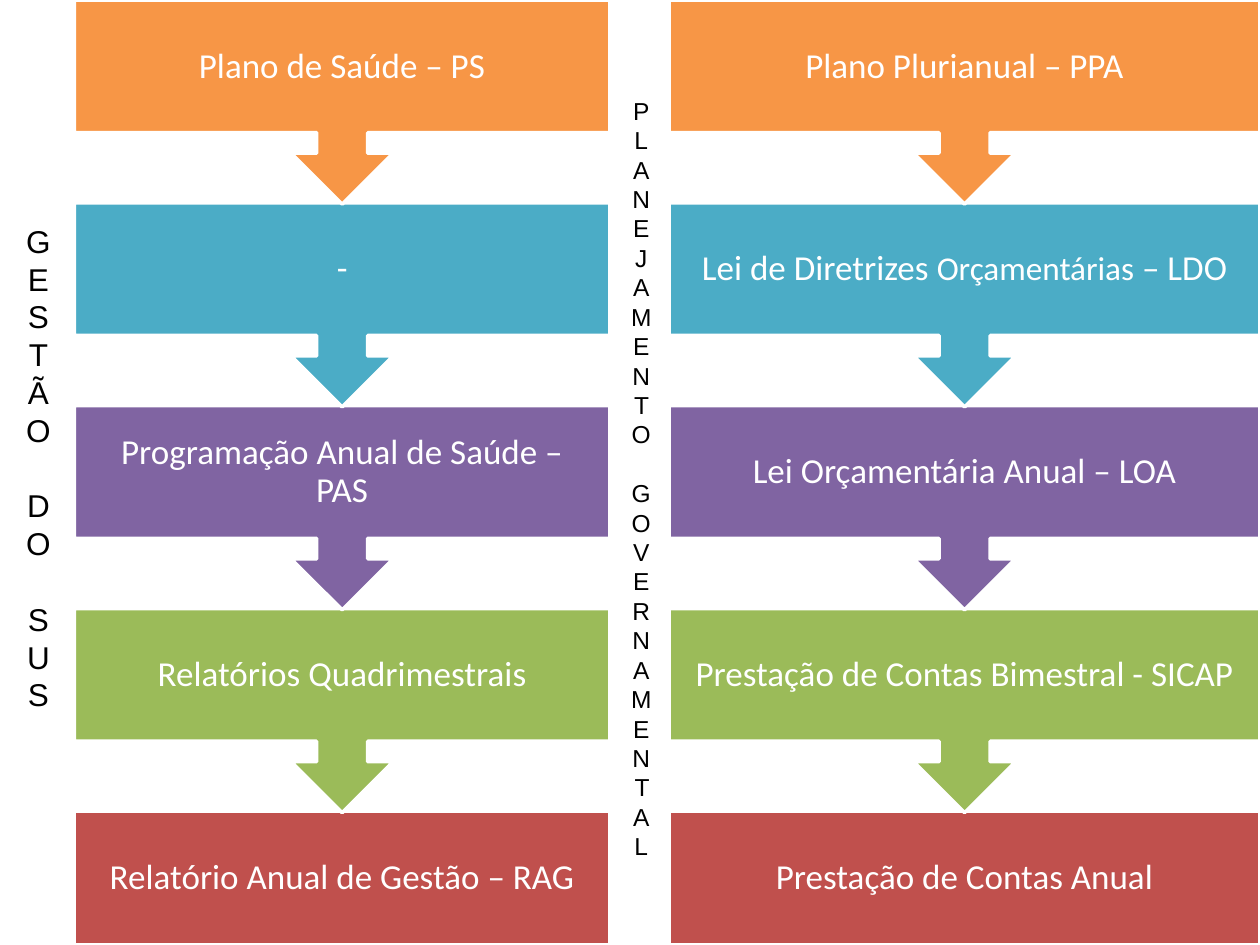
from typing import NamedTuple

from pptx import Presentation
from pptx.dml.color import RGBColor
from pptx.enum.shapes import MSO_SHAPE
from pptx.enum.text import MSO_ANCHOR, PP_ALIGN
from pptx.util import Inches, Pt

COLORS = ["F79646", "4BACC6", "8064A2", "9BBB59", "C0504D"]
STEP = 1.61
CALLOUT_HEIGHT = 1.62
BOX_HEIGHT = 1.06


class Run(NamedTuple):
    text: str
    size: int = 20


class Flow(NamedTuple):
    left: float
    width: float
    steps: list[list[Run]]


class Label(NamedTuple):
    left: float
    width: float
    height: float
    text: str
    size: int


FLOWS = [
    Flow(0.59, 4.25, [
        [Run("Plano de Saúde – PS")],
        [Run("-")],
        [Run("Programação Anual de Saúde – PAS")],
        [Run("Relatórios Quadrimestrais")],
        [Run("Relatório Anual de Gestão – RAG")],
    ]),
    Flow(5.31, 4.69, [
        [Run("Plano Plurianual – PPA")],
        [Run("Lei de Diretrizes "), Run("Orçamentárias", 19), Run(" – LDO")],
        [Run("Lei Orçamentária Anual – LOA")],
        [Run("Prestação de Contas Bimestral - SICAP")],
        [Run("Prestação de Contas Anual")],
    ]),
]
LABELS = [
    Label(0.04, 0.53, 7.32, "GESTÃO DO SUS", 18),
    Label(4.86, 0.46, 7.49, "PLANEJAMENTO GOVERNAMENTAL", 14),
]


def rgb(color: str) -> RGBColor:
    return RGBColor.from_string(color)


def add_runs(p, runs: list[Run], font: str, color: str) -> None:
    p.alignment = PP_ALIGN.CENTER
    for run in runs:
        r = p.add_run()
        r.text = run.text
        r.font.name = font
        r.font.size = Pt(run.size)
        r.font.color.rgb = rgb(color)


def add_step(s, flow: Flow, index: int) -> None:
    """Draw one step; every step but the last points down to the next."""
    is_last = index == len(flow.steps) - 1
    kind = MSO_SHAPE.RECTANGLE if is_last else MSO_SHAPE.UP_ARROW_CALLOUT
    height = BOX_HEIGHT if is_last else CALLOUT_HEIGHT
    left, top, width = Inches(flow.left), Inches(index * STEP), Inches(flow.width)

    sp = s.shapes.add_shape(kind, left, top, width, Inches(height))
    sp.rotation = 0 if is_last else 180
    sp.shadow.inherit = False
    sp.fill.solid()
    sp.fill.fore_color.rgb = rgb(COLORS[index])
    sp.line.color.rgb = rgb("FFFFFF")
    sp.line.width = Pt(2)

    tf = s.shapes.add_textbox(left, top, width, Inches(BOX_HEIGHT)).text_frame
    tf.word_wrap = True
    tf.vertical_anchor = MSO_ANCHOR.MIDDLE
    tf.margin_left = tf.margin_right = Inches(0.16)
    tf.margin_top = tf.margin_bottom = Inches(0.16)
    p = tf.paragraphs[0]
    p.line_spacing = 0.9
    add_runs(p, flow.steps[index], "Calibri", "FFFFFF")


def add_label(s, label: Label) -> None:
    """Draw a label whose upright letters are stacked downwards."""
    sp = s.shapes.add_textbox(Inches(label.left), Inches(0.05),
                              Inches(label.width), Inches(label.height))
    sp.fill.solid()
    sp.fill.fore_color.rgb = rgb("FFFFFF")
    tf = sp.text_frame
    tf.word_wrap = True
    sp.element.txBody.bodyPr.set("vert", "wordArtVert")
    add_runs(tf.paragraphs[0], [Run(label.text, label.size)], "Arial", "000000")


def main() -> None:
    prs = Presentation()
    prs.slide_width, prs.slide_height = Inches(10), Inches(7.5)
    s = prs.slides.add_slide(prs.slide_layouts[6])
    for flow in FLOWS:
        for index in reversed(range(len(flow.steps))):
            add_step(s, flow, index)
    for label in LABELS:
        add_label(s, label)
    prs.save("out.pptx")


if __name__ == "__main__":
    main()
